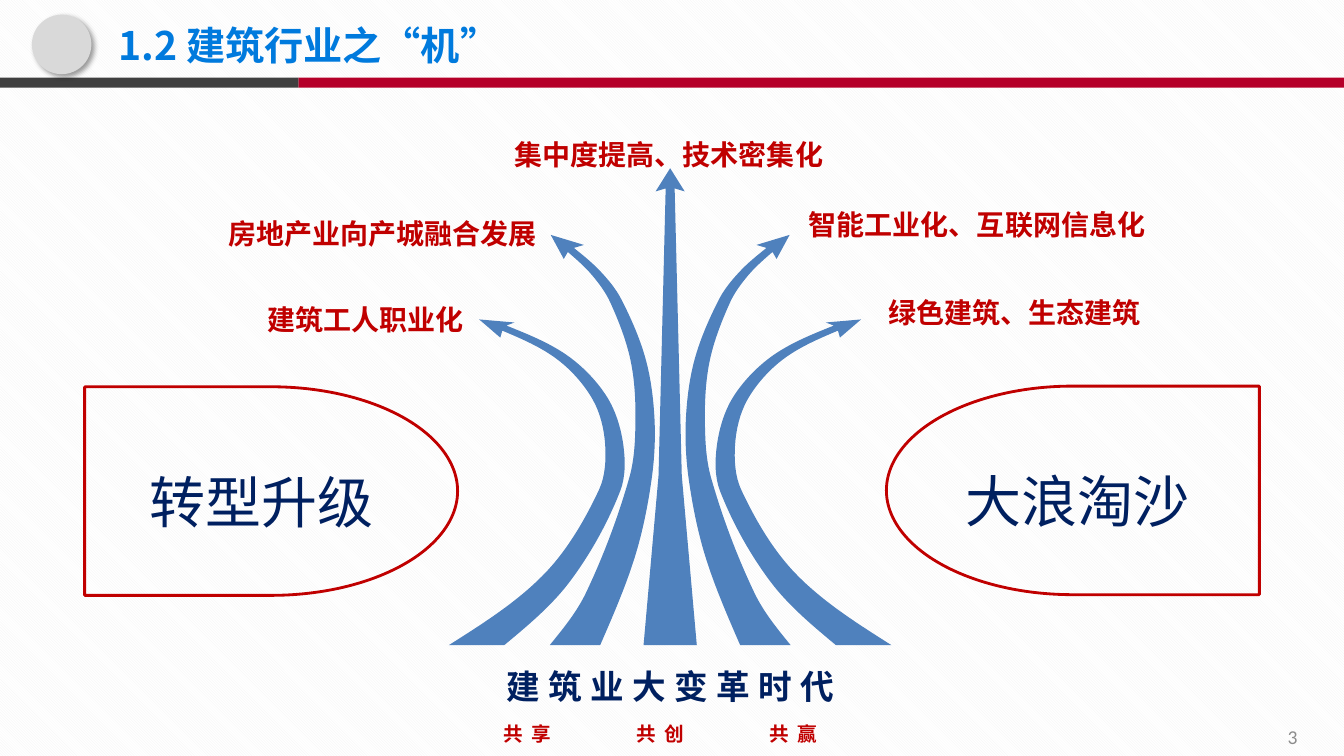
import math

import pptx
import pptx.dml.color
import pptx.enum.dml
import pptx.enum.shapes
import pptx.enum.text
import pptx.oxml
import pptx.oxml.ns
import pptx.util

Pt = pptx.util.Pt
RGBColor = pptx.dml.color.RGBColor
SHAPE = pptx.enum.shapes.MSO_SHAPE
ALIGN = pptx.enum.text.PP_ALIGN
ANCHOR = pptx.enum.text.MSO_ANCHOR
qn = pptx.oxml.ns.qn

RED = RGBColor(0xC0, 0x00, 0x00)
NAVY = RGBColor(0x00, 0x20, 0x60)
TITLE_BLUE = RGBColor(0x00, 0x7A, 0xDD)
ARROW_BLUE = RGBColor(0x4F, 0x81, 0xBD)
CRIMSON = RGBColor(0xB5, 0x00, 0x29)
CHARCOAL = RGBColor(0x40, 0x40, 0x40)
DISC_GRAY = RGBColor(0xD9, 0xD9, 0xD9)
NUMBER_GRAY = RGBColor(0x8C, 0x8C, 0x8C)
STRIPE = RGBColor(0xF2, 0xF2, 0xF2)
WHITE = RGBColor(0xFF, 0xFF, 0xFF)
CJK_FONT = "Noto Sans CJK SC"
NAMESPACE = 'xmlns:a="http://schemas.openxmlformats.org/drawingml/2006/main"'
GRID = 100  # freeform units per point

# Arrow edges as (distance from the fan's axis, height above its base):
# a curved rising edge, a straight head, a curved falling edge
OUTER_ARROW = (
    [(118.4, 0), (71.6, 45.4), (35.6, 110.2), (33.5, 143.3), (45, 177.1),
     (73.1, 206.6), (117, 228.2)],
    [(111.2, 230.4), (136.4, 232.6), (121.3, 219.6)],
    [(119.9, 224.6), (80.3, 203.8), (55.1, 175), (46.4, 143.3),
     (50.8, 110.9), (89.6, 51.1), (158, 0)])
INNER_ARROW = (
    [(50, 0), (25.2, 63.1), (13.3, 118.1), (11.2, 161.3), (17.6, 204.5),
     (34.9, 247), (49.3, 266.4), (68.8, 283.7)],
    [(61.6, 285.8), (85.3, 293), (76, 275.8)],
    [(73.1, 280.8), (55.8, 264.2), (42.8, 244.8), (28.4, 203.8),
     (24.8, 161.3), (29.2, 119.5), (60.1, 37.4), (86, 0)])
CENTRE_HALF = [(19, 0), (8.3, 121), (3.2, 326.2), (10.4, 324), (0, 340.6)]


def add_text(slide, box, text, size, color, bold=True, align=ALIGN.LEFT,
             line_spacing=1.0, anchor=ANCHOR.TOP, font_name=CJK_FONT, tracking=0, tabs=()):
    shape = slide.shapes.add_textbox(*map(Pt, box))
    frame = shape.text_frame
    frame.text = text
    frame.word_wrap = True
    frame.vertical_anchor = anchor
    paragraph = frame.paragraphs[0]
    if tabs:
        stops = "".join(f'<a:tab pos="{Pt(tab)}" algn="l"/>' for tab in tabs)
        paragraph._p.get_or_add_pPr().append(
            pptx.oxml.parse_xml(f"<a:tabLst {NAMESPACE}>{stops}</a:tabLst>"))
    paragraph.alignment = align
    paragraph.line_spacing = line_spacing
    for run in paragraph.runs:
        run.font.size = Pt(size)
        run.font.bold = bold
        run.font.color.rgb = color
        run.font.name = font_name
        properties = run._r.get_or_add_rPr()
        properties.append(pptx.oxml.parse_xml(f'<a:ea {NAMESPACE} typeface="{font_name}"/>'))
        if tracking:
            properties.set("spc", str(tracking * 100))


def add_filled(slide, kind, box, color):
    shape = slide.shapes.add_shape(kind, *map(Pt, box))
    shape.shadow.inherit = False
    shape.fill.solid()
    shape.fill.fore_color.rgb = color
    shape.line.fill.background()
    return shape


def bend(lines, start):
    """Turn a run of straight segments from start into one smooth curve."""
    ends = [line.find(qn("a:pt")) for line in lines]
    knots = [start] + [(int(end.get("x")), int(end.get("y"))) for end in ends]
    last = len(knots) - 1

    def handle(index, toward):
        before, here, after = knots[index - 1:index + 2]
        total = math.dist(before, here) + math.dist(here, after)
        reach = toward * math.dist(here, knots[index + toward]) / total / 3
        return tuple(h + (a - b) * reach for b, h, a in zip(before, here, after))

    for index, line in enumerate(lines):
        leaving = handle(index, 1) if index > 0 else None
        arriving = handle(index + 1, -1) if index + 1 < last else None
        if leaving is None:
            leaving = tuple((a + b) / 2 for a, b in zip(knots[0], arriving))
        if arriving is None:
            arriving = tuple((a + b) / 2 for a, b in zip(knots[last], leaving))
        points = "".join(f'<a:pt x="{round(x)}" y="{round(y)}"/>'
                         for x, y in (leaving, arriving, knots[index + 1]))
        curve = pptx.oxml.parse_xml(f"<a:cubicBezTo {NAMESPACE}>{points}</a:cubicBezTo>")
        line.getparent().replace(line, curve)


def add_header(slide, box):
    left, top, width, height = box
    # Two-colour rule under the title
    split = 213.12
    rule_top = top + height - 7.2
    add_filled(slide, SHAPE.RECTANGLE, (left + split, rule_top, width - split, 7.2), CRIMSON)
    add_filled(slide, SHAPE.RECTANGLE, (left, rule_top, split, 7.2), CHARCOAL)
    # Disc with a soft shadow
    disc = add_filled(slide, SHAPE.OVAL, (left + 22.8, top + 10.5, 42.5, 42.5), DISC_GRAY)
    effects = disc._element.spPr.find(qn("a:effectLst"))
    effects.append(pptx.oxml.parse_xml(
        f'<a:outerShdw {NAMESPACE} blurRad="{Pt(4)}" dist="{Pt(3)}" dir="2700000" algn="tl" '
        'rotWithShape="0"><a:srgbClr val="000000"><a:alpha val="40000"/></a:srgbClr>'
        '</a:outerShdw>'))
    add_text(slide, (left + 77.4, top + 9.2, 715, 45.4), "1.2 建筑行业之“机”", 28,
             TITLE_BLUE, anchor=ANCHOR.MIDDLE)


def add_fan(slide, box):
    left, top, width, height = box
    axis, base = left + width / 2, top + height

    def draw(outline, side):
        points = [((axis + side * x) * GRID, (base - y) * GRID) for x, y in outline]
        builder = slide.shapes.build_freeform(*points[0], scale=Pt(1) / GRID)
        builder.add_line_segments(points[1:], close=True)
        arrow = builder.convert_to_shape()
        arrow.shadow.inherit = False
        arrow.fill.solid()
        arrow.fill.fore_color.rgb = ARROW_BLUE
        arrow.line.fill.background()
        return arrow

    # Mirrored curved arrows, then the straight one
    for rising, head, falling in (OUTER_ARROW, INNER_ARROW):
        for side in (-1, 1):
            arrow = draw(rising + head + falling, side)
            lines = list(arrow._element.iter(qn("a:lnTo")))
            for first, edge in ((0, rising), (len(rising + head), falling)):
                start = list(arrow._element.iter(qn("a:moveTo"), qn("a:lnTo"),
                                                 qn("a:cubicBezTo")))[first]
                point = start.find(qn("a:pt"))
                bend(lines[first:first + len(edge) - 1],
                     (int(point.get("x")), int(point.get("y"))))
    draw(CENTRE_HALF + [(-x, y) for x, y in CENTRE_HALF[-2::-1]], 1)

    # Labels at the arrow tips: offset from axis and top
    for text, x, y, label_width, align, spacing in (
            ("建筑工人职业化", -308.2, 80, 167.8, ALIGN.RIGHT, 1.5),
            ("房地产业向产城融合发展", -349.4, 18.7, 261.4, ALIGN.RIGHT, 1.5),
            ("集中度提高、技术密集化", -129.4, -37.4, 257, ALIGN.CENTER, 1.5),
            ("智能工业化、互联网信息化", 91.9, 12.2, 261.4, ALIGN.LEFT, 1.5),
            ("绿色建筑、生态建筑", 148.7, 87.1, 200, ALIGN.LEFT, 1.0)):
        add_text(slide, (axis + x, top + y, label_width, 40), text, 20, RED,
                 align=align, line_spacing=spacing)
    add_text(slide, (axis - 132.8, base - 3.4, 266, 51), "建筑业大变革时代", 24, NAVY,
             align=ALIGN.CENTER, line_spacing=1.5, tracking=6)


def add_panel(slide, box, text, text_shift, mirrored=False):
    left, top, width, height = box
    panel = slide.shapes.add_shape(SHAPE.FLOWCHART_DELAY, *map(Pt, box))
    panel.shadow.inherit = False
    panel.fill.background()
    panel.line.color.rgb = RED
    panel.line.width = Pt(2)
    if mirrored:
        panel._element.spPr.find(qn("a:xfrm")).set("flipH", "1")
    add_text(slide, (left + text_shift, top + 30.2, width, 80), text, 40, NAVY,
             bold=False, align=ALIGN.CENTER, line_spacing=1.5)


def add_footer(slide, box):
    left, top, width, height = box
    add_text(slide, (left + 352.6, top, 281, 25.2), "共享\t共创\t共赢", 14, RED,
             tracking=6, tabs=(95, 190))
    add_text(slide, (left + 710, top, 224, 28.8), "3", 14, NUMBER_GRAY, bold=False,
             align=ALIGN.RIGHT, anchor=ANCHOR.MIDDLE, font_name="Calibri")


def main():
    presentation = pptx.Presentation()
    presentation.slide_width = Pt(960)
    presentation.slide_height = Pt(540)
    slide = presentation.slides.add_slide(presentation.slide_layouts[6])

    # Striped background
    fill = slide.background.fill
    fill.patterned()
    fill.pattern = pptx.enum.dml.MSO_PATTERN.LIGHT_DOWNWARD_DIAGONAL
    fill.fore_color.rgb = STRIPE
    fill.back_color.rgb = WHITE

    add_header(slide, (0, 0, 960, 62.6))
    add_fan(slide, (320.7, 120.2, 316, 340.6))
    add_panel(slide, (60.5, 276.3, 266.4, 149), "转型升级", -6.9)
    add_panel(slide, (633.2, 275.8, 266.4, 149), "大浪淘沙", 3.2, mirrored=True)
    add_footer(slide, (0, 512, 960, 28))
    presentation.save("out.pptx")


if __name__ == "__main__":
    main()
